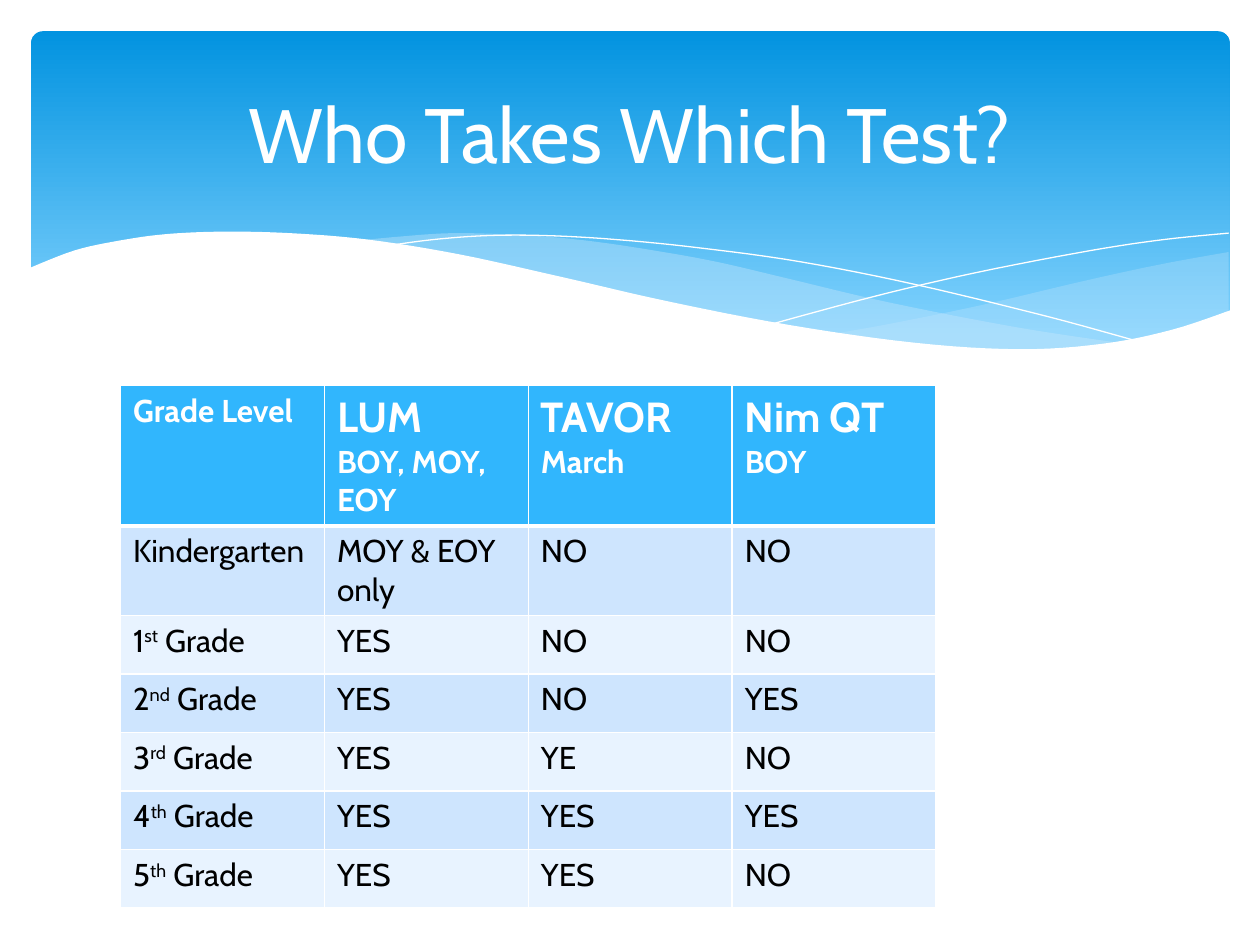
"""Build the slide showing which grade level takes which test."""
from dataclasses import dataclass

from lxml import etree
from pptx import Presentation
from pptx.dml.color import RGBColor
from pptx.enum.shapes import MSO_SHAPE
from pptx.enum.text import MSO_ANCHOR, PP_ALIGN
from pptx.oxml.ns import qn
from pptx.util import Cm, Pt

ROUNDED = MSO_SHAPE.ROUNDED_RECTANGLE
MIDDLE = MSO_ANCHOR.MIDDLE
CENTER = PP_ALIGN.CENTER


@dataclass(frozen=True)
class Theme:
    font: str = "Cabin"
    white: str = "FFFFFF"
    black: str = "000000"
    banner_top: str = "0293E0"
    banner_bottom: str = "83D3FE"
    wave: str = "C6E7FC"
    header: str = "31B6FD"
    bands: tuple = ("CEE5FE", "E8F3FF")
    title_size: int = 44
    test_size: int = 24
    body_size: int = 18


def smooth_curve(points, steps=6):
    padded = [points[0], *points, points[-1]]
    curve = [points[0]]
    for before, start, end, after in zip(padded, padded[1:], padded[2:], padded[3:]):
        for step in range(1, steps + 1):
            t = step / steps
            curve.append(tuple(
                0.5 * (2 * b + (c - a) * t + (2 * a - 5 * b + 4 * c - d) * t ** 2
                       + (3 * b - a - 3 * c + d) * t ** 3)
                for a, b, c, d in zip(before, start, end, after)))
    return curve


def style_run(run, size, color, bold=False):
    run.font.name = theme.font
    run.font.size = Pt(size)
    run.font.bold = bold
    run.font.color.rgb = RGBColor.from_string(color)


theme = Theme()
presentation = Presentation()
presentation.slide_width = Cm(25.4)
presentation.slide_height = Cm(19.05)
slide = presentation.slides.add_slide(presentation.slide_layouts[6])

banner = slide.shapes.add_shape(ROUNDED, Cm(0.63), Cm(0.63), Cm(24.16), Cm(6.86))
banner.adjustments[0] = 0.034
banner.shadow.inherit = False
banner.line.fill.background()
banner.fill.gradient()
banner.fill.gradient_angle = 270
gradient = zip(banner.fill.gradient_stops, (0, 0.9), (theme.banner_top, theme.banner_bottom))
for stop, position, color in gradient:
    stop.position = position
    stop.color.rgb = RGBColor.from_string(color)

right_wave = [
    [(24.77, 5.08), (23.39, 5.33), (21.87, 5.66), (19.79, 6.15), (17.93, 6.53), (16.79, 6.73)],
    [(16.79, 6.73), (18.26, 6.91), (19.84, 7.04), (20.93, 7.05), (22.15, 6.96), (23.39, 6.73),
     (24.1, 6.53), (24.77, 6.27)],
]
broad_wave = [
    [(22.68, 6.93), (20.5, 6.6), (17.93, 6.1), (15.98, 5.64), (14.45, 5.28), (13.06, 5.03),
     (11.81, 4.85), (10.67, 4.75), (9.17, 4.7), (7.95, 4.78), (7.26, 4.85)],
    [(7.26, 4.85), (9.19, 5.16), (11.4, 5.64), (13.46, 6.1), (15.7, 6.55), (17.65, 6.86),
     (19.33, 7.03), (20.78, 7.06), (21.77, 7.03), (22.68, 6.93)],
]
falling_line = [
    [(7.85, 4.95), (8.74, 4.83), (9.83, 4.75), (11, 4.75), (12.42, 4.83), (14.12, 5),
     (16.15, 5.28), (18.47, 5.74), (21.11, 6.38), (23.04, 6.91)],
]
rising_line = [
    [(15.57, 6.53), (17.65, 5.97), (19.71, 5.49), (22, 5.05), (23.47, 4.83), (24.77, 4.7)],
]
white_wave = [
    [(24.82, 6.25), (23.62, 6.65), (22.23, 6.93), (20.55, 7.04), (18.44, 6.91), (15.9, 6.55),
     (13.44, 6.07), (11.35, 5.59), (9.27, 5.13), (7.42, 4.83), (5.84, 4.7), (4.5, 4.67),
     (3.35, 4.72), (2.41, 4.85), (1.5, 5.05), (0.58, 5.41)],
    [(0.58, 8.36), (24.82, 8.36)],
]
waves = [
    (right_wave, theme.wave, 29),
    (broad_wave, theme.wave, 40),
    (falling_line, None, 100),
    (rising_line, None, 100),
    (white_wave, theme.white, 100),
]
for edges, color, opacity in waves:
    outline = [(Cm(x), Cm(y)) for edge in edges for x, y in smooth_curve(edge)]
    builder = slide.shapes.build_freeform(*outline[0])
    builder.add_line_segments(outline[1:], close=color is not None)
    wave = builder.convert_to_shape()
    wave.shadow.inherit = False
    if color is None:
        wave.fill.background()
        wave.line.color.rgb = RGBColor.from_string(theme.white)
        wave.line.width = Pt(0)
        continue
    wave.line.fill.background()
    wave.fill.solid()
    wave.fill.fore_color.rgb = RGBColor.from_string(color)
    if opacity < 100:
        wave_color = wave.element.spPr.find(qn("a:solidFill"))[0]
        etree.SubElement(wave_color, qn("a:alpha"), val=str(opacity * 1000))

rows = [
    ("Grade Level", "LUM\nBOY, MOY, EOY", "TAVOR\nMarch", "Nim QT\nBOY"),
    ("Kindergarten", "MOY & EOY only", "NO", "NO"),
    ("1|st| Grade", "YES", "NO", "NO"),
    ("2|nd| Grade", "YES", "NO", "YES"),
    ("3|rd| Grade", "YES", "YE", "NO"),
    ("4|th| Grade", "YES", "YES", "YES"),
    ("5|th| Grade", "YES", "YES", "NO"),
]
column_width, row_height = 4.11, 1.18
table = slide.shapes.add_table(
    len(rows), len(rows[0]), Cm(2.43), Cm(7.77),
    Cm(column_width * len(rows[0])), Cm(row_height * len(rows))).table
for row_index, row in enumerate(rows):
    is_header = row_index == 0
    fill_color = theme.header if is_header else theme.bands[(row_index - 1) % 2]
    text_color = theme.white if is_header else theme.black
    for column_index, text in enumerate(row):
        cell = table.cell(row_index, column_index)
        base, *suffixes = text.split("|")
        cell.text_frame.text = base
        for suffix in suffixes:
            cell.text_frame.paragraphs[0].add_run().text = suffix
        paragraphs = cell.text_frame.paragraphs
        for paragraph_index, paragraph in enumerate(paragraphs):
            is_test_name = len(paragraphs) > 1 and paragraph_index == 0
            size = theme.test_size if is_test_name else theme.body_size
            for run in paragraph.runs:
                style_run(run, size, text_color, is_header)
        if suffixes:
            paragraphs[0].runs[1].font._element.set("baseline", "30000")
        properties = cell._tc.get_or_add_tcPr()
        for side in ("lnL", "lnR", "lnT", "lnB"):
            is_thick = (side, row_index) in (("lnB", 0), ("lnT", 1))
            border = etree.SubElement(properties, qn(f"a:{side}"), w=str(Pt(3 if is_thick else 1)))
            border_fill = etree.SubElement(border, qn("a:solidFill"))
            etree.SubElement(border_fill, qn("a:srgbClr"), val=theme.white)
        cell.fill.solid()
        cell.fill.fore_color.rgb = RGBColor.from_string(fill_color)

title = slide.shapes.add_textbox(Cm(1.27), Cm(0.94), Cm(22.86), Cm(3.48))
title.text_frame.word_wrap = True
title.text_frame.vertical_anchor = MIDDLE
title.text_frame.text = "Who Takes Which Test?"
title_paragraph = title.text_frame.paragraphs[0]
title_paragraph.alignment = CENTER
style_run(title_paragraph.runs[0], theme.title_size, theme.white)

presentation.save("out.pptx")
